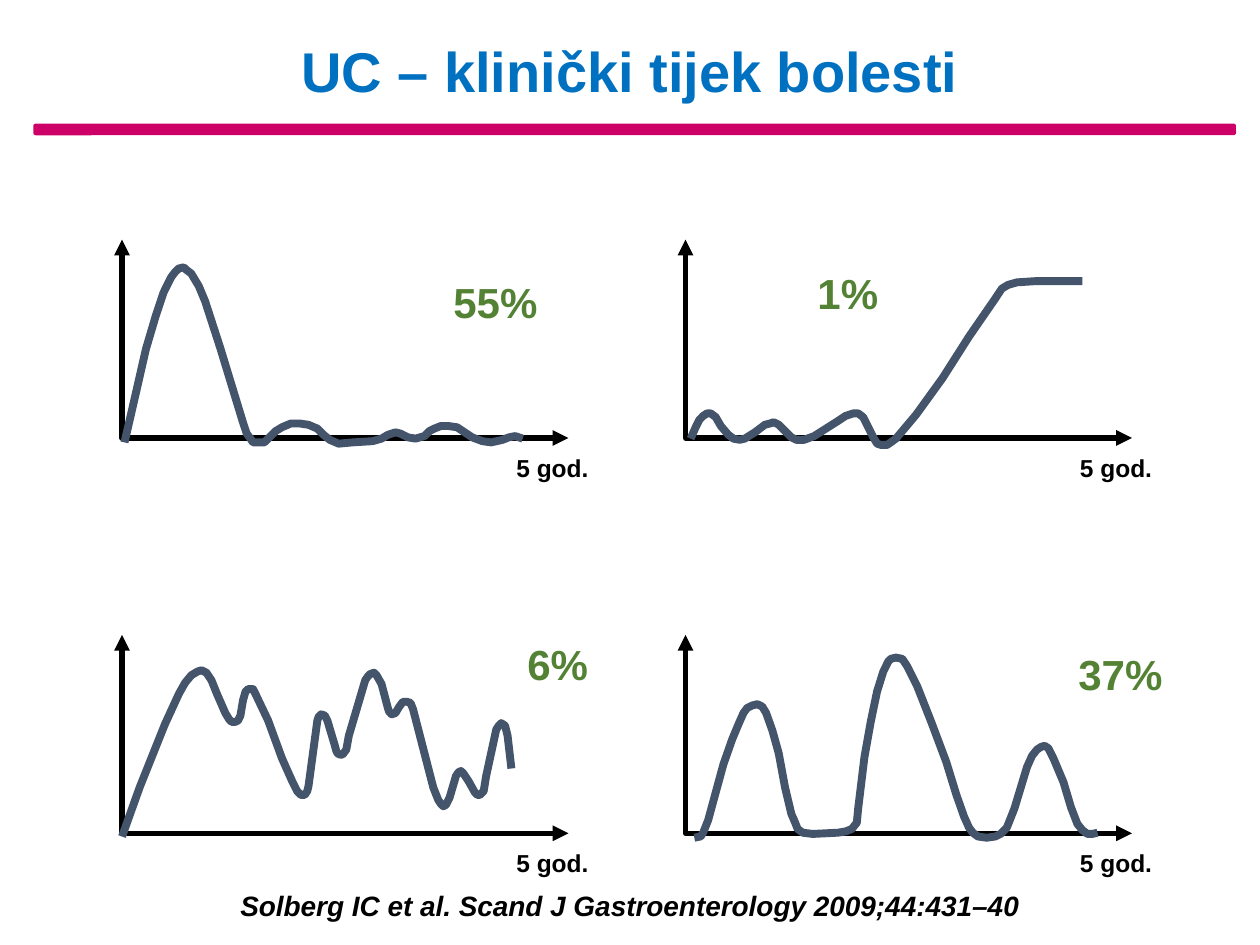
from dataclasses import dataclass

from lxml.etree import SubElement
from pptx import Presentation
from pptx.dml.color import RGBColor
from pptx.enum.shapes import MSO_SHAPE
from pptx.enum.text import MSO_ANCHOR, MSO_AUTO_SIZE, PP_ALIGN
from pptx.oxml.ns import qn
from pptx.util import Cm, Pt


@dataclass(frozen=True)
class Theme:
    font: str = "Arial"
    title: RGBColor = RGBColor(0x00, 0x70, 0xC0)
    rule: RGBColor = RGBColor(0xCC, 0x00, 0x66)
    text: RGBColor = RGBColor(0x00, 0x00, 0x00)
    share: RGBColor = RGBColor(0x54, 0x82, 0x35)
    curve: RGBColor = RGBColor(0x44, 0x54, 0x6A)
    title_size: int = 32
    share_size: int = 24
    source_size: int = 16
    axis_size: int = 14


THEME = Theme()
UNIT = Cm(0.0254)  # one step of the curve coordinates
AXIS_W, AXIS_H = 9.45, 4.14
COLUMNS = (2.46, 13.82)
ROWS = (4.83, 12.8)

# Disease activity over time: steps right of the origin, steps above the time axis
DECLINE = [
    (2, 2), (11, 41), (19, 76), (27, 103), (33, 121), (36, 127), (39, 133), (42, 137),
    (45, 140), (49, 141), (51, 139), (55, 136), (61, 126), (66, 114), (78, 77), (96, 18),
    (99, 9), (102, 5), (104, 2), (109, 2), (113, 2), (117, 6), (122, 11), (127, 14),
    (134, 17), (141, 17), (148, 16), (155, 13), (160, 8), (165, 4), (172, 1), (183, 2),
    (199, 3), (206, 5), (211, 8), (217, 10), (221, 9), (227, 6), (233, 5), (240, 7),
    (244, 11), (248, 13), (253, 15), (259, 15), (266, 14), (272, 10), (278, 6), (286, 3),
    (293, 2), (302, 4), (307, 6), (312, 7), (318, 5),
]
INCREASE = [
    (4, 5), (8, 14), (11, 20), (14, 23), (17, 25), (20, 25), (24, 22), (28, 15),
    (34, 8), (38, 5), (43, 4), (47, 5), (55, 10), (63, 16), (67, 17), (70, 18),
    (74, 16), (79, 11), (84, 6), (88, 4), (94, 4), (102, 7), (121, 19), (127, 23),
    (133, 25), (137, 25), (141, 22), (145, 14), (149, 6), (152, 1), (155, 0), (160, 0),
    (167, 5), (183, 24), (204, 53), (225, 86), (245, 115), (251, 124), (256, 127),
    (263, 129), (278, 130), (315, 130),
]
CONTINUOUS = [
    (0, 3), (14, 42), (34, 92), (45, 116), (50, 125), (55, 131), (60, 134), (63, 135),
    (67, 133), (71, 127), (75, 117), (82, 101), (85, 96), (87, 94), (90, 94), (92, 95),
    (94, 99), (96, 111), (98, 118), (100, 120), (102, 120), (104, 120), (106, 116),
    (116, 95), (127, 65), (135, 47), (139, 39), (142, 36), (145, 36), (147, 39),
    (148, 43), (155, 95), (156, 98), (158, 100), (161, 99), (163, 95), (169, 75),
    (170, 71), (171, 69), (173, 68), (175, 68), (178, 72), (180, 83), (193, 127),
    (195, 130), (197, 132), (200, 133), (202, 131), (206, 124), (211, 105), (212, 102),
    (214, 100), (217, 101), (220, 106), (223, 110), (226, 110), (229, 109), (231, 104),
    (247, 42), (251, 32), (253, 29), (255, 27), (257, 28), (260, 34), (265, 51),
    (267, 54), (269, 55), (271, 53), (275, 47), (280, 38), (282, 36), (284, 36),
    (287, 39), (289, 51), (297, 88), (299, 91), (301, 93), (304, 91), (306, 83), (309, 57),
]
RELAPSING = [
    (7, 2), (12, 3), (14, 6), (18, 16), (30, 60), (37, 80), (42, 92), (46, 101),
    (49, 105), (53, 107), (57, 108), (61, 106), (64, 101), (69, 87), (74, 69), (79, 42),
    (84, 21), (87, 14), (89, 9), (93, 6), (101, 5), (121, 6), (127, 7), (132, 9),
    (136, 14), (137, 25), (142, 66), (147, 94), (152, 118), (157, 134), (161, 142),
    (163, 144), (167, 145), (172, 144), (176, 138), (184, 122), (195, 94), (207, 62),
    (215, 36), (221, 19), (225, 10), (228, 6), (232, 3), (239, 2), (246, 3), (250, 5),
    (255, 10), (261, 25), (271, 58), (275, 67), (279, 72), (282, 74), (285, 75),
    (288, 73), (292, 65), (300, 46), (306, 26), (311, 13), (315, 8), (319, 5),
    (323, 5), (327, 6),
]

# Curve, share of patients, and the share label's left, top and width in its panel
PANELS = [
    (DECLINE, "55%", (6.43, 0.61, 2.24)),
    (INCREASE, "1%", (2.41, 0.43, 1.75)),
    (CONTINUOUS, "6%", (7.92, -0.05, 1.75)),
    (RELAPSING, "37%", (7.67, 0.15, 2.24)),
]


def add_text(slide, box, text, size, color, align=PP_ALIGN.LEFT,
             anchor=MSO_ANCHOR.TOP, italic=False, wrap=False):
    sp = slide.shapes.add_textbox(*map(Cm, box))
    tf = sp.text_frame
    tf.word_wrap = wrap
    tf.auto_size = MSO_AUTO_SIZE.NONE if wrap else MSO_AUTO_SIZE.SHAPE_TO_FIT_TEXT
    tf.vertical_anchor = anchor
    p = tf.paragraphs[0]
    p.alignment = align
    r = p.add_run()
    r.text = text
    r.font.name = THEME.font
    r.font.size = Pt(size)
    r.font.bold = True
    r.font.italic = italic
    r.font.color.rgb = color
    return sp


def add_polyline(slide, left, top, points, scale, color, width):
    """Draw an open, unfilled line through points given relative to left, top."""
    builder = slide.shapes.build_freeform(*points[0], scale=scale)
    builder.add_line_segments(points[1:], close=False)
    sp = builder.convert_to_shape(Cm(left), Cm(top))
    sp.shadow.inherit = False
    sp.fill.background()
    sp.line.color.rgb = color
    sp.line.width = Pt(width)
    return sp


def add_header(slide, left, top, width):
    sp = add_text(slide, (left + 0.58, top, width - 1.35, 1.2),
                  "UC – klinički tijek bolesti", THEME.title_size, THEME.title,
                  PP_ALIGN.CENTER, MSO_ANCHOR.MIDDLE, wrap=True)
    sp.text_frame.margin_top = sp.text_frame.margin_bottom = 0
    sp.text_frame.paragraphs[0].line_spacing = 0.9
    rule = slide.shapes.add_shape(MSO_SHAPE.ROUNDED_RECTANGLE,
                                  Cm(left), Cm(top + 1.62), Cm(width), Cm(0.2))
    rule.shadow.inherit = False
    rule.fill.solid()
    rule.fill.fore_color.rgb = THEME.rule
    rule.line.color.rgb = THEME.rule
    rule.line.width = Pt(1)


def add_panel(slide, left, top, curve, share, share_box):
    axes = add_polyline(slide, left, top, [(0, 0), (0, AXIS_H), (AXIS_W, AXIS_H)],
                        Cm(1), THEME.text, 3)
    ln = axes.line._get_or_add_ln()
    for end in ("a:headEnd", "a:tailEnd"):
        SubElement(ln, qn(end), type="triangle")
    x, y, width = share_box
    add_text(slide, (left + x, top + y, width, 1.3), share, THEME.share_size, THEME.share)
    add_text(slide, (left + 7.7, top + AXIS_H + 0.03, 1.98, 0.86), "5 god.",
             THEME.axis_size, THEME.text)
    add_polyline(slide, left, top + AXIS_H, [(px, -py) for px, py in curve],
                 UNIT, THEME.curve, 4.5)


def main():
    prs = Presentation()
    prs.slide_width, prs.slide_height = Cm(25.4), Cm(19.05)
    slide = prs.slides.add_slide(prs.slide_layouts[6])
    add_header(slide, 0.69, 0.89, 24.21)
    for i, panel in enumerate(PANELS):
        row, column = divmod(i, len(COLUMNS))
        add_panel(slide, COLUMNS[column], ROWS[row], *panel)
    add_text(slide, (4.52, 17.81, 16.36, 0.91),
             "Solberg IC et al. Scand J Gastroenterology 2009;44:431–40",
             THEME.source_size, THEME.text, PP_ALIGN.CENTER, MSO_ANCHOR.BOTTOM, italic=True)
    prs.save("out.pptx")


if __name__ == "__main__":
    main()
